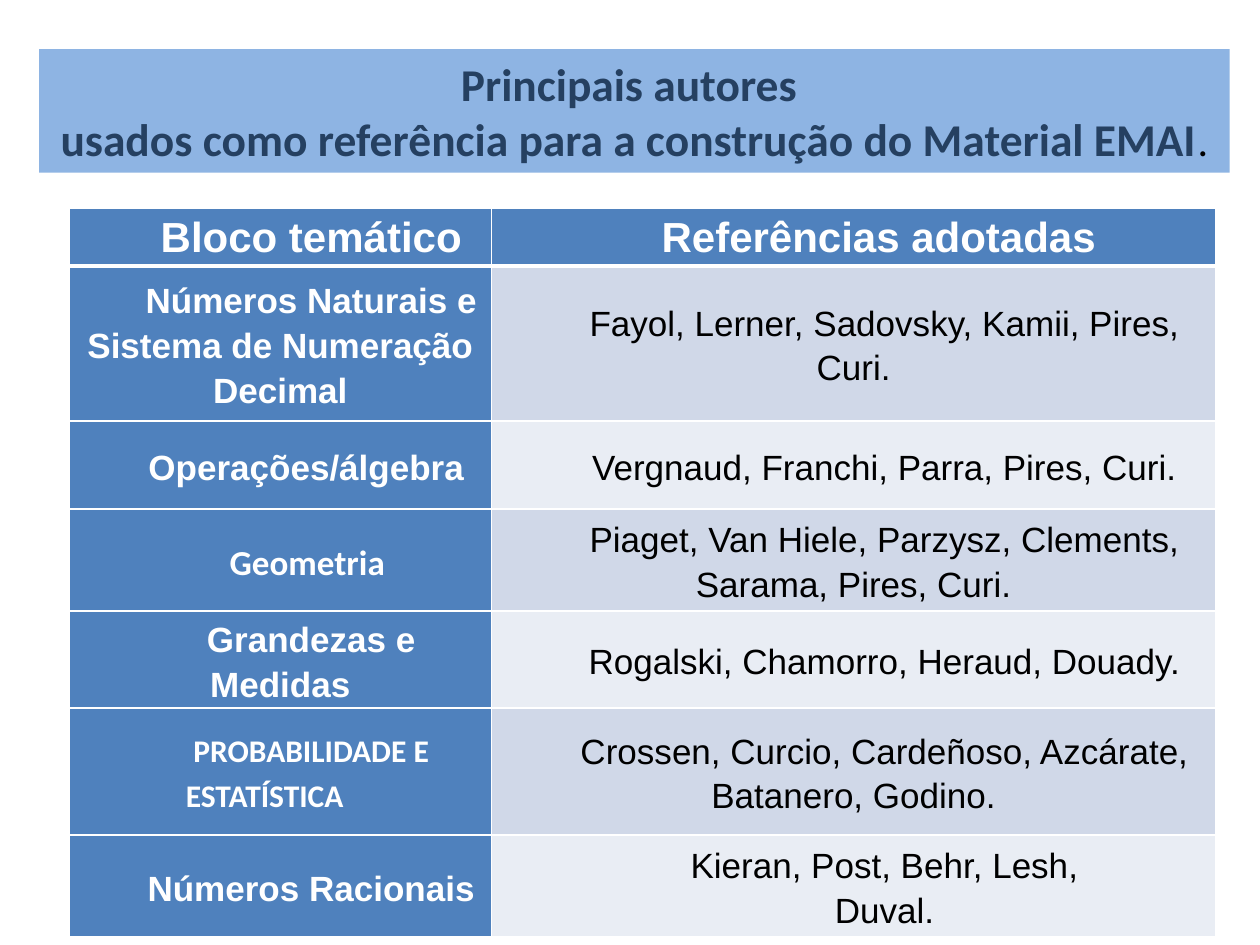
from lxml import etree
from pptx import Presentation
from pptx.dml.color import RGBColor
from pptx.enum import text
from pptx.oxml import ns
from pptx.util import Inches, Pt

COLORS = {
    "banner": "8EB4E3", "title": "254061", "blue": "4F81BD",
    "odd": "D0D8E8", "even": "E9EDF4", "white": "FFFFFF", "black": "000000",
}
TITLE = [
    [("Principais autores ", 26, "title", True)],
    [("usados como referência para a construção do Material EMAI", 26, "title", True),
     (".", 24, "black", False)],
]
HEADERS = ("Bloco temático", "Referências adotadas ")
TOPICS = [
    ("Números Naturais e Sistema de Numeração Decimal", "Arial", 20,
     ["Fayol, Lerner, Sadovsky, Kamii, Pires, Curi."]),
    ("Operações/álgebra ", "Arial", 20, ["Vergnaud, Franchi, Parra, Pires, Curi."]),
    ("Geometria ", "Calibri", 20,
     ["Piaget, Van Hiele, Parzysz, Clements, Sarama, Pires, Curi."]),
    ("Grandezas e Medidas", "Arial", 20, ["Rogalski, Chamorro, Heraud, Douady."]),
    ("PROBABILIDADE E ESTATÍSTICA \t", "Calibri", 18,
     ["Crossen, Curcio, Cardeñoso, Azcárate, Batanero, Godino."]),
    ("Números Racionais", "Arial", 20, ["Kieran, Post, Behr, Lesh,", "Duval."]),
]
COLUMN_WIDTHS = (3.35, 5.75)
ROW_HEIGHTS = (0.42, 1.23, 0.7, 0.81, 0.7, 1.01, 0.81)


def rgb(name):
    return RGBColor.from_string(COLORS[name])


def add_run(paragraph, content, size, color, bold, font="Calibri"):
    run = paragraph.add_run()
    run.text = content
    run.font.name = font
    run.font.size = Pt(size)
    run.font.bold = bold
    run.font.color.rgb = rgb(color)


def paragraphs(frame, count):
    for _ in range(count - 1):
        frame.add_paragraph()
    for paragraph in frame.paragraphs:
        paragraph.alignment = text.PP_ALIGN.CENTER
    return frame.paragraphs


def set_borders(cell, row):
    properties = cell._tc.get_or_add_tcPr()
    thick_side = {0: "lnB", 1: "lnT"}.get(row)
    for index, side in enumerate(("lnL", "lnR", "lnT", "lnB")):
        line = etree.Element(ns.qn(f"a:{side}"), w=str(Pt(3 if side == thick_side else 1)))
        fill = etree.SubElement(line, ns.qn("a:solidFill"))
        etree.SubElement(fill, ns.qn("a:srgbClr"), val=COLORS["white"])
        properties.insert(index, line)


def fill_cell(cell, row, lines, size, color, bold, font, background):
    cell.margin_left = cell.margin_right = Inches(0.07)
    cell.margin_top = cell.margin_bottom = 0
    cell.vertical_anchor = text.MSO_ANCHOR.MIDDLE if row else text.MSO_ANCHOR.TOP
    cell.fill.solid()
    cell.fill.fore_color.rgb = rgb(background)
    set_borders(cell, row)
    for paragraph, line in zip(paragraphs(cell.text_frame, len(lines)), lines):
        paragraph.line_spacing = 1.15
        properties = paragraph._p.get_or_add_pPr()
        properties.set("marL", "0")
        properties.set("indent", str(Inches(0.49)))
        add_run(paragraph, line, size, color, bold, font)


def add_title(slide):
    title = slide.shapes.title
    title.left, title.top = Inches(0.31), Inches(0.39)
    title.width, title.height = Inches(9.45), Inches(0.98)
    title.fill.solid()
    title.fill.fore_color.rgb = rgb("banner")
    frame = title.text_frame
    frame.word_wrap = True
    frame.auto_size = text.MSO_AUTO_SIZE.SHAPE_TO_FIT_TEXT
    frame.vertical_anchor = text.MSO_ANCHOR.MIDDLE
    for paragraph, runs in zip(paragraphs(frame, len(TITLE)), TITLE):
        for run in runs:
            add_run(paragraph, *run)


def add_references(slide):
    table = slide.shapes.add_table(
        len(ROW_HEIGHTS), len(COLUMN_WIDTHS), Inches(0.55), Inches(1.65),
        Inches(sum(COLUMN_WIDTHS)), Inches(sum(ROW_HEIGHTS))).table
    for column, width in zip(table.columns, COLUMN_WIDTHS):
        column.width = Inches(width)
    for row, height in zip(table.rows, ROW_HEIGHTS):
        row.height = Inches(height)
    for column, header in enumerate(HEADERS):
        fill_cell(table.cell(0, column), 0, [header], 24, "white", True, "Arial", "blue")
    for row, (topic, font, size, authors) in enumerate(TOPICS, 1):
        fill_cell(table.cell(row, 0), row, [topic], size, "white", True, font, "blue")
        fill_cell(table.cell(row, 1), row, authors, 20, "black", False, "Arial",
                  "odd" if row % 2 else "even")


def main():
    presentation = Presentation()
    presentation.slide_width, presentation.slide_height = Inches(10), Inches(7.5)
    slide = presentation.slides.add_slide(presentation.slide_layouts[5])
    add_title(slide)
    add_references(slide)
    presentation.save("out.pptx")


if __name__ == "__main__":
    main()
